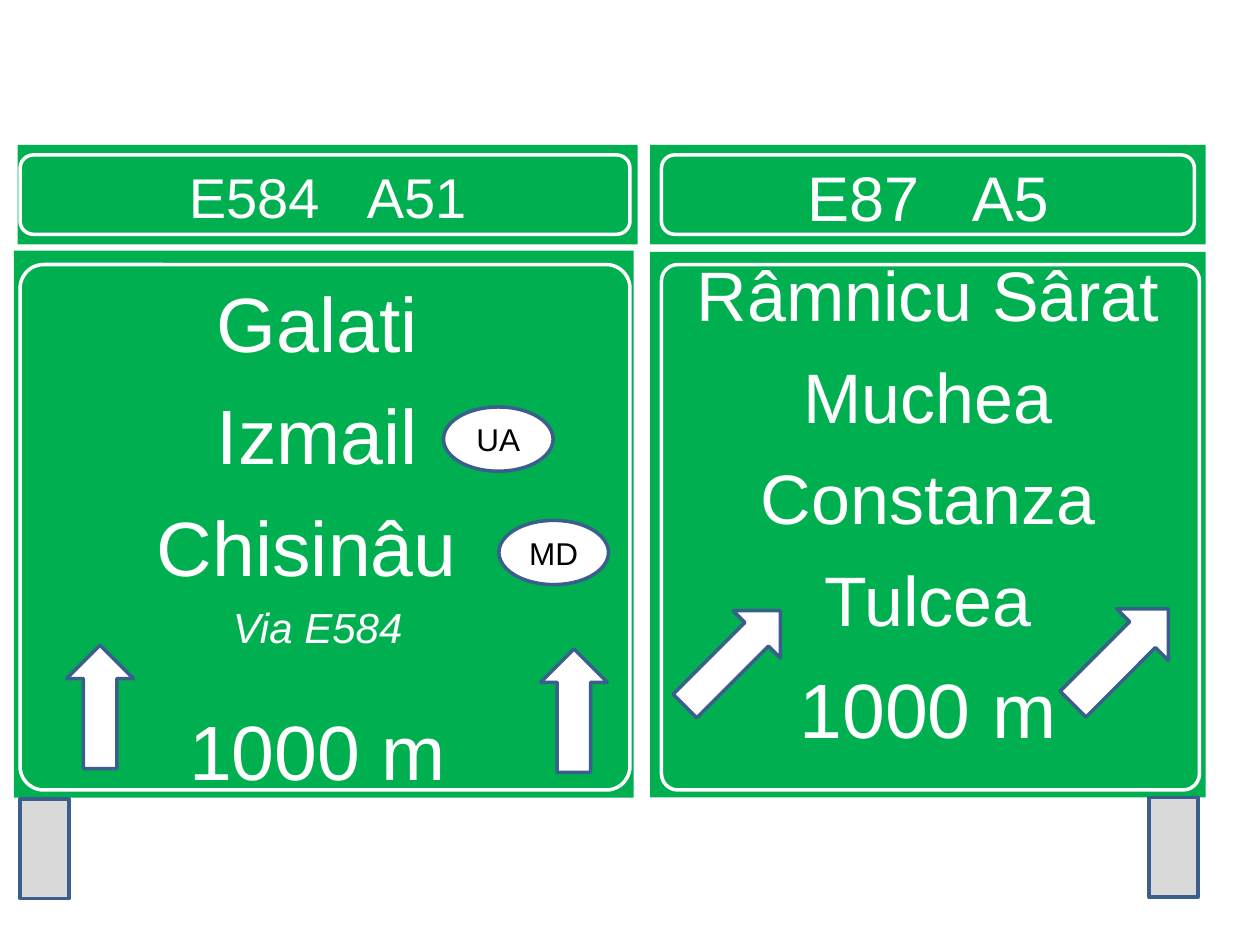
from pptx import Presentation
from pptx.dml.color import RGBColor
from pptx.enum.shapes import MSO_SHAPE as Shape
from pptx.enum.text import MSO_ANCHOR as Anchor, PP_ALIGN as Align
from pptx.util import Inches, Pt

GREEN, WHITE, BLUE, GREY, BLACK = "00B050", "FFFFFF", "3A5F8C", "D9D9D9", "000000"


def color(hex_string):
    return RGBColor.from_string(hex_string)


def add_part(s, kind, box, fill=None, line=None, rotation=0):
    """Add a preset shape; box is left, top, width, height in inches."""
    sp = s.shapes.add_shape(kind, *map(Inches, box))
    sp.shadow.inherit = False
    sp.rotation = rotation
    if fill:
        sp.fill.solid()
        sp.fill.fore_color.rgb = color(fill)
    else:
        sp.fill.background()
    if line:
        sp.line.color.rgb = color(line)
        sp.line.width = Pt(2)
    else:
        sp.line.fill.background()
    return sp


def style_run(r, size, hex_string, italic=False):
    r.font.name = "Arial"
    r.font.size = Pt(size)
    r.font.italic = italic
    r.font.color.rgb = color(hex_string)


def set_insets(tf, left, top, right, bottom):
    tf.margin_left, tf.margin_top = Inches(left), Inches(top)
    tf.margin_right, tf.margin_bottom = Inches(right), Inches(bottom)


def add_frame(s, box, radius=None):
    sp = add_part(s, Shape.ROUNDED_RECTANGLE, box, line=WHITE)
    if radius is not None:
        sp.adjustments[0] = radius


def add_route_header(s, box, frame, routes, size):
    """Green strip with two road numbers set well apart."""
    tf = add_part(s, Shape.RECTANGLE, box, GREEN).text_frame
    tf.word_wrap = True
    tf.vertical_anchor = Anchor.MIDDLE
    set_insets(tf, 0.1, 0.12, 0.1, 0.1)
    p = tf.paragraphs[0]
    p.alignment = Align.CENTER
    for text in (routes[0], " ", routes[1]):
        r = p.add_run()
        r.text = text
        style_run(r, size, WHITE)
        if text == " ":  # widen the gap by letter spacing
            r._r.get_or_add_rPr().set("spc", str(round(size * 0.56) * 100))
    add_frame(s, frame)


def add_destinations(s, box, frame, radius, left_inset, top_inset, lines):
    """Green panel; each line is text, size, space before, italic."""
    tf = add_part(s, Shape.RECTANGLE, box, GREEN).text_frame
    tf.word_wrap = True
    tf.vertical_anchor = Anchor.TOP
    set_insets(tf, left_inset, top_inset, 0.1, 0)
    for i, (text, size, gap, italic) in enumerate(lines):
        p = tf.add_paragraph() if i else tf.paragraphs[0]
        p.text = text
        p.alignment = Align.CENTER
        p.space_before = Pt(gap)
        style_run(p.runs[0], size, WHITE, italic)
    add_frame(s, frame, radius)


def add_country(s, left, top, code):
    sp = add_part(s, Shape.OVAL, (left, top, 0.87, 0.51), WHITE, BLUE)
    tf = sp.text_frame
    tf.word_wrap = True
    tf.vertical_anchor = Anchor.MIDDLE
    p = tf.paragraphs[0]
    p.text = code
    p.alignment = Align.CENTER
    style_run(p.runs[0], 18, BLACK)


def add_left_sign(s, left, top):
    add_route_header(s, (left + 0.03, top, 4.92, 0.79),
                     (left + 0.05, top + 0.08, 4.84, 0.63), ("E584", "A51"), 32)
    add_destinations(
        s, (left, top + 0.84, 4.92, 4.34), (left + 0.05, top + 0.95, 4.84, 4.17),
        0.045, 0, 0.2,
        [("Galati", 44, 5, False), ("Izmail", 44, 11, False),
         ("Chisinâu ", 44, 11, False), ("Via E584", 24, 5.6, True),
         ("1000 m", 44, 29.4, False)])
    add_country(s, left + 3.41, top + 2.08, "UA")
    add_country(s, left + 3.85, top + 2.98, "MD")
    # Straight-ahead arrows
    for x, y in ((0.42, 3.97), (4.18, 4)):
        add_part(s, Shape.UP_ARROW, (left + x, top + y, 0.53, 0.98), WHITE, BLUE)


def add_right_sign(s, left, top):
    add_route_header(s, (left, top, 4.41, 0.79),
                     (left + 0.09, top + 0.08, 4.23, 0.63), ("E87", "A5"), 36)
    add_destinations(
        s, (left, top + 0.85, 4.41, 4.33), (left + 0.09, top + 0.95, 4.27, 4.17),
        0.031, 0.1, 0,
        [("Râmnicu Sârat", 40, 21.5, False), ("Muchea", 40, 10, False),
         ("Constanza", 40, 10, False), ("Tulcea", 40, 10, False),
         ("1000 m", 44, 12, False)])
    # Exit arrows
    for x, y, height in ((0.12, 3.81, 0.53), (3.2, 3.77, 0.58)):
        add_part(s, Shape.RIGHT_ARROW, (left + x, top + y, 1.07, height),
                 WHITE, BLUE, rotation=315)


def add_posts(s, top):
    for left, drop in ((0.16, 0.01), (9.12, 0)):
        add_part(s, Shape.RECTANGLE, (left, top + drop, 0.39, 0.79), GREY, BLUE)


def main():
    prs = Presentation()
    prs.slide_width, prs.slide_height = Inches(10), Inches(7.5)
    s = prs.slides.add_slide(prs.slide_layouts[6])
    add_right_sign(s, 5.16, 1.15)
    add_left_sign(s, 0.11, 1.15)
    add_posts(s, 6.33)
    prs.save("out.pptx")


if __name__ == "__main__":
    main()
